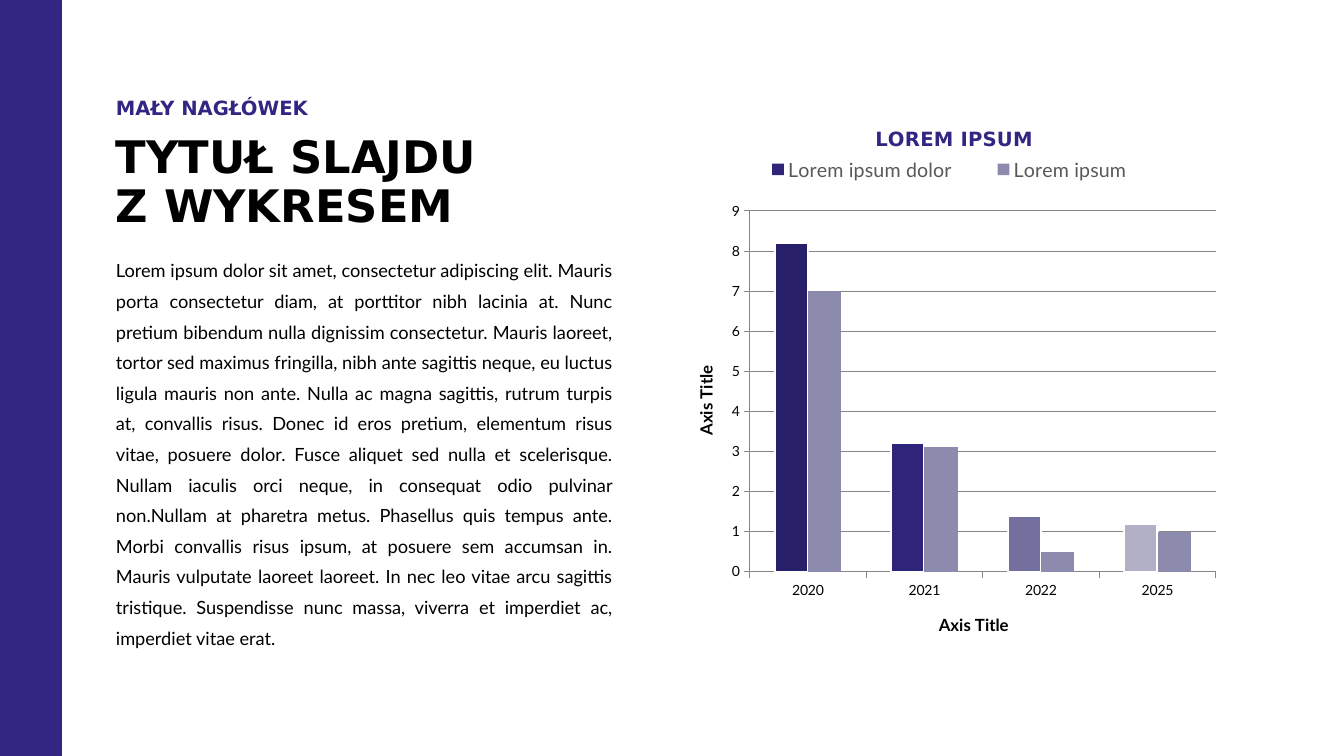
from lxml import etree
from pptx import Presentation
from pptx import util as u
from pptx.chart.data import CategoryChartData
from pptx.dml.color import RGBColor
from pptx.enum import chart as charts, shapes, text
from pptx.oxml.ns import qn

SCALE = 914400 / 100.8
VIOLET, BLACK, WHITE = "312783", "000000", "FFFFFF"
GREY, LEGEND_GREY = "868686", "595959"
HEAD_FONT, BODY_FONT = "DejaVu Sans", "Lato"

BODY = (
    "Lorem ipsum dolor sit amet, consectetur adipiscing elit. Mauris porta consectetur diam, "
    "at porttitor nibh lacinia at. Nunc pretium bibendum nulla dignissim consectetur. Mauris "
    "laoreet, tortor sed maximus fringilla, nibh ante sagittis neque, eu luctus ligula mauris "
    "non ante. Nulla ac magna sagittis, rutrum turpis at, convallis risus. Donec id eros "
    "pretium, elementum risus vitae, posuere dolor. Fusce aliquet sed nulla et scelerisque. "
    "Nullam iaculis orci neque, in consequat odio pulvinar non.Nullam at pharetra metus. "
    "Phasellus quis tempus ante. Morbi convallis risus ipsum, at posuere sem accumsan in. "
    "Mauris vulputate laoreet laoreet. In nec leo vitae arcu sagittis tristique. Suspendisse "
    "nunc massa, viverra et imperdiet ac, imperdiet vitae erat."
)
YEARS = ["2020", "2021", "2022", "2025"]
SERIES = [
    ("Lorem ipsum dolor", [8.2, 3.2, 1.4, 1.2], "2E257B"),
    ("Lorem ipsum", [7, 3.1, 0.5, 1], "8C8AAD"),
]
YEAR_COLOURS = ["271F67", "2E257B", "73709D", "B1B0C4"]


def px(length):
    return u.Emu(round(length * SCALE))


def colour(hex_code):
    return RGBColor.from_string(hex_code)


def set_font(font, name, size, hex_code, bold=False):
    font.name, font.size, font.bold = name, u.Pt(size), bold
    font.color.rgb = colour(hex_code)


def set_fill(fill, hex_code):
    fill.solid()
    fill.fore_color.rgb = colour(hex_code)


def set_line(line, hex_code, width):
    line.color.rgb = colour(hex_code)
    line.width = u.Pt(width)


def add_band(page, box):
    band = page.shapes.add_shape(shapes.MSO_SHAPE.RECTANGLE, *map(px, box))
    band.shadow.inherit = False
    set_fill(band.fill, VIOLET)
    band.line.fill.background()


def fill_text(shape, words, font, spacing, anchor=text.MSO_ANCHOR.TOP,
              align=text.PP_ALIGN.LEFT):
    frame = shape.text_frame
    frame.word_wrap = True
    frame.auto_size = text.MSO_AUTO_SIZE.NONE
    frame.vertical_anchor = anchor
    frame.margin_left = frame.margin_right = 0
    frame.margin_top = frame.margin_bottom = px(4)
    frame.text = words
    para = frame.paragraphs[0]
    para.alignment, para.line_spacing = align, spacing
    set_font(para.font, *font)


def add_text_column(page, box):
    left, top, width, height = box
    title = page.shapes.title
    title.left, title.top = px(left), px(top + 40)
    title.width, title.height = px(width), px(108)
    fill_text(title, "TYTUŁ SLAJDU\vZ WYKRESEM", (HEAD_FONT, 32, BLACK, True), 0.9)

    heading = page.shapes.add_textbox(px(left), px(top), px(width), px(36))
    fill_text(heading, "MAŁY NAGŁÓWEK", (HEAD_FONT, 14, VIOLET, True), 0.9,
              anchor=text.MSO_ANCHOR.MIDDLE)

    body = page.shapes.add_textbox(px(left), px(top + 156), px(width), px(height - 156))
    fill_text(body, BODY, (BODY_FONT, 13, BLACK), 1.4, align=text.PP_ALIGN.JUSTIFY)


def place_part(part, index, **shares):
    """Fix a chart part's place, given as shares of the chart's size."""
    for old in part.findall(qn("c:layout")):
        part.remove(old)
    layout = etree.Element(qn("c:layout"))
    part.insert(index, layout)
    manual = etree.SubElement(layout, qn("c:manualLayout"))
    if part.tag == qn("c:plotArea"):
        etree.SubElement(manual, qn("c:layoutTarget")).set("val", "inner")
    for mode in ("xMode", "yMode"):
        etree.SubElement(manual, qn(f"c:{mode}")).set("val", "edge")
    for name, share in shares.items():
        etree.SubElement(manual, qn(f"c:{name}")).set("val", str(share))


def add_title(owner, words, font):
    owner.has_title = True
    title = owner.chart_title if hasattr(owner, "chart_title") else owner.axis_title
    title.text_frame.text = words
    set_font(title.text_frame.paragraphs[0].font, *font)


def style_axis(axis):
    axis.major_tick_mark = charts.XL_TICK_MARK.OUTSIDE
    axis.minor_tick_mark = charts.XL_TICK_MARK.NONE
    set_line(axis.format.line, GREY, 0.75)
    set_font(axis.tick_labels.font, BODY_FONT, 10, BLACK)
    add_title(axis, "Axis Title", (BODY_FONT, 12, BLACK, True))


def add_column_chart(page, box):
    data = CategoryChartData()
    data.categories = YEARS
    for name, values, _ in SERIES:
        data.add_series(name, values)
    chart = page.shapes.add_chart(
        charts.XL_CHART_TYPE.COLUMN_CLUSTERED, *map(px, box), data).chart
    set_font(chart.font, BODY_FONT, 10, BLACK)

    add_title(chart, "LOREM IPSUM", (HEAD_FONT, 14, VIOLET, True))
    chart.has_legend = True
    chart.legend.position = charts.XL_LEGEND_POSITION.TOP
    chart.legend.include_in_layout = False
    set_font(chart.legend.font, BODY_FONT, 14, LEGEND_GREY)

    style_axis(chart.category_axis)
    scale = chart.value_axis
    style_axis(scale)
    scale.minimum_scale, scale.maximum_scale, scale.major_unit = 0, 9, 1
    scale.has_major_gridlines = True
    set_line(scale.major_gridlines.format.line, GREY, 0.75)

    plot = chart.plots[0]
    plot.gap_width, plot.overlap, plot.vary_by_categories = 150, 0, False
    for series, (_, _, hex_code) in zip(plot.series, SERIES):
        set_fill(series.format.fill, hex_code)
    for index, hex_code in enumerate(YEAR_COLOURS):
        column = plot.series[0].points[index].format
        set_fill(column.fill, hex_code)
        set_line(column.line, WHITE, 1.5)

    root = chart.element
    place_part(root.find(".//" + qn("c:plotArea")), 0, x=0.14, y=0.2, w=0.84, h=0.65)
    place_part(root.find(".//" + qn("c:legend")), 1, x=0.11, y=0.1, w=0.78, h=0.05)
    place_part(root.find(qn("c:chart")).find(qn("c:title")), 1, x=0.36, y=0.04)


def main():
    deck = Presentation()
    deck.slide_width, deck.slide_height = px(1344), px(756)
    page = deck.slides.add_slide(deck.slide_layouts[5])
    add_band(page, (0, 0, 62, 756))
    add_text_column(page, (116, 91, 496, 564))
    add_column_chart(page, (672, 100, 555, 555))
    deck.save("out.pptx")


if __name__ == "__main__":
    main()
